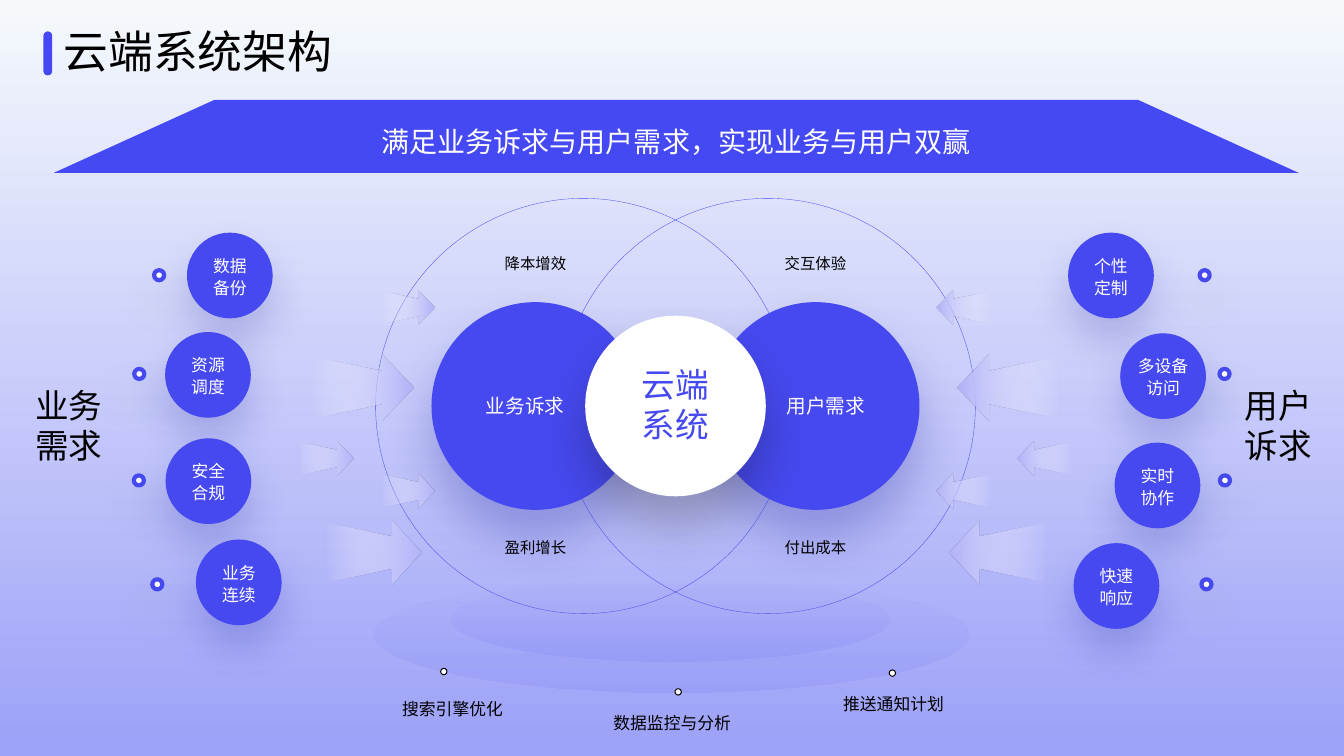
"""Builds the cloud system architecture slide."""
from lxml.etree import SubElement as Sub
from pptx import Presentation
from pptx.dml.color import RGBColor
from pptx.enum.shapes import MSO_SHAPE as Kind
from pptx.enum.text import MSO_ANCHOR as Anchor, PP_ALIGN as Align
from pptx.oxml.ns import qn
from pptx.util import Pt

FONT = "Noto Sans CJK SC"
BLUE = RGBColor(0x46, 0x49, 0xEF)
BRIGHT = RGBColor(0x44, 0x49, 0xF4)
LILAC = RGBColor(0xB5, 0xB6, 0xF9)
SKY = RGBColor(0xF5, 0xF9, 0xFC)
DUSK = RGBColor(0x9D, 0xA1, 0xF8)
NAVY = RGBColor(0x0C, 0x0F, 0x8E)
GREEN = RGBColor(0x0D, 0x62, 0x48)
INK = RGBColor(0x0D, 0x0D, 0x0D)
WHITE = RGBColor(0xFF, 0xFF, 0xFF)
BLACK = RGBColor(0, 0, 0)

TITLE = "云端系统架构"
BANNER = "满足业务诉求与用户需求，实现业务与用户双赢"
HUB = "云端系统"
MID, ROW = 482.5, 290
HALVES = [
    (1, "用户需求", "交互体验", "付出成本"),
    (-1, "业务诉求", "降本增效", "盈利增长"),
]
ENDS = [("业务\n需求", 49), ("用户\n诉求", 913)]
BALLS = [
    ("数据\n备份", 164.2, 196.8), ("资源\n调度", 148.6, 267.8),
    ("安全\n合规", 148.9, 343.7), ("业务\n连续", 170.6, 416),
    ("个性\n定制", 793.6, 196.8), ("多设备\n访问", 830.8, 268.7),
    ("实时\n协作", 826.8, 346.8), ("快速\n响应", 797.5, 418.6),
]
FLOORS = [(478.5, 442.4, 314, 59.8), (479.9, 453.2, 425.5, 82.8)]
FOOT = [
    ("搜索引擎优化", 323.3, 506.2, 317, 479.7),
    ("推送通知计划", 638.3, 502.5, 637.4, 480.8),
    ("数据监控与分析", 480.2, 516.2, 484.4, 494.2),
]
DOT_MID = 487.1
DOTS = [(373.4, 196.6), (387.6, 267.1), (387.9, 343.2), (374.7, 417.4)]
TIP_MID = 489.8
TIPS = [
    (179.2, 219.5, 38.2, 24.5), (194.2, 276.7, 72.7, 47.5),
    (237.3, 327.7, 38.2, 24.5), (179.2, 350.8, 38.2, 24.5),
    (188.4, 394.7, 69.1, 45.4),
]

deck = Presentation()
deck.slide_width, deck.slide_height = Pt(960), Pt(540)
slide = deck.slides.add_slide(deck.slide_layouts[6])


def blend(fill, stops, angle):
    fill.gradient()
    fill.gradient_angle = angle
    for stop, (place, color) in zip(fill.gradient_stops, stops):
        stop.position = place
        stop.color.rgb = color


def fade(shape, *alphas):
    colors = list(shape.element.spPr.iter(qn("a:srgbClr")))
    for color, alpha in zip(colors, alphas):
        Sub(color, qn("a:alpha"), val=str(alpha * 1000))


def shade(shape, color, alpha, blur, drop):
    effects = shape.element.spPr.find(qn("a:effectLst"))
    outer = Sub(effects, qn("a:outerShdw"), blurRad=str(Pt(blur)),
                dist=str(Pt(drop)), dir="5400000", algn="t", rotWithShape="0")
    tint = Sub(outer, qn("a:srgbClr"), val=str(color))
    Sub(tint, qn("a:alpha"), val=str(alpha * 1000))


def paint(shape, fill=None, line=None, width=0.75):
    shape.shadow.inherit = False
    if fill is None:
        shape.fill.background()
    else:
        shape.fill.solid()
        shape.fill.fore_color.rgb = fill
    if line is None:
        shape.line.fill.background()
    else:
        shape.line.color.rgb = line
        shape.line.width = Pt(width)


def oval(x, y, wide, high=None, **style):
    high = high or wide
    shape = slide.shapes.add_shape(
        Kind.OVAL, Pt(x - wide / 2), Pt(y - high / 2), Pt(wide), Pt(high))
    paint(shape, **style)
    return shape


def write(frame, text, size, color, align=Align.CENTER, gap=None):
    frame.text = text
    frame.vertical_anchor = Anchor.MIDDLE
    for para in frame.paragraphs:
        para.alignment = align
        para.line_spacing = gap
        for run in para.runs:
            run.font.size = Pt(size)
            run.font.name = FONT
            run.font.color.rgb = color
            Sub(run.font._element, qn("a:ea"), typeface=FONT)


def note(text, x, y, wide, size, color=BLACK, high=40, **style):
    box = slide.shapes.add_textbox(
        Pt(x - wide / 2), Pt(y - high / 2), Pt(wide), Pt(high))
    box.text_frame.word_wrap = True
    write(box.text_frame, text, size, color, **style)


def arrow(side, gap, y, wide, high):
    tip, half = TIP_MID + side * gap, high / 2
    neck, tail = tip + side * wide * 0.31, tip + side * wide
    rim = [(neck, half), (neck, half * 0.5), (tail, half * 0.94),
           (tail, -half * 0.94), (neck, -half * 0.5), (neck, -half)]
    path = slide.shapes.build_freeform(Pt(tip), Pt(y))
    path.add_line_segments([(Pt(x), Pt(y + rise)) for x, rise in rim])
    shape = path.convert_to_shape()
    paint(shape)
    blend(shape.fill, [(0.05, LILAC), (1, WHITE)], 0 if side > 0 else 180)
    fade(shape, 100, 0)


blend(slide.background.fill, [(0, SKY), (1, DUSK)], 270)

for floor in FLOORS:
    pool = oval(*floor)
    blend(pool.fill, [(0, BLUE), (1, BLUE)], 270)
    fade(pool, 0, 10)

for text, x, y, dot_x, dot_y in FOOT:
    note(text, x, y, 130, 12, high=22)
    oval(dot_x, dot_y, 4.5, fill=WHITE, line=BLACK, width=0.7)

for text, x in ENDS:
    note(text, x, 303.5, 70, 24, high=66)

for text, x, y in BALLS:
    shade(oval(x, y, 60.5, fill=BLUE, line=BLUE), NAVY, 18, 29, 16)
    note(text, x, y, 70, 12, WHITE, gap=1.1)

for side, *_ in HALVES:
    disc = oval(MID + side * 100.1, ROW, 148.4, fill=BLUE)
    shade(disc, NAVY, 25, 35, 20)
for side, name, top, low in HALVES:
    note(name, MID + side * 107.3, ROW, 76, 14, WHITE, high=24)
    note(top, MID + side * 100, 188.2, 76, 11, high=21)
    note(low, MID + side * 100, 391.2, 76, 11, high=21)
    oval(MID + side * 65.9, ROW, 296.6, line=BLUE, width=0.23)

shade(oval(MID, ROW, 129, fill=WHITE), INK, 25, 35, 20)
note(HUB, MID, 288.5, 75.6, 24, BLUE, high=66)

for side in (1, -1):
    for tip in TIPS:
        arrow(side, *tip)
    for gap, y in DOTS:
        dot = oval(DOT_MID + side * gap, y, 7.2, fill=WHITE, line=BLUE, width=3)
        shade(dot, GREEN, 18, 29, 16)

note(TITLE, 148.2, 36, 220, 32, high=46, align=Align.LEFT)
bar = slide.shapes.add_shape(
    Kind.ROUNDED_RECTANGLE, Pt(31), Pt(22.4), Pt(6.3), Pt(31.5))
bar.adjustments[0] = 0.5
paint(bar, BRIGHT)
roof = slide.shapes.add_shape(
    Kind.TRAPEZOID, Pt(38.4), Pt(71.4), Pt(889.2), Pt(52.1))
roof.adjustments[0] = 2.2
paint(roof, BRIGHT)
write(roof.text_frame, BANNER, 20, WHITE, gap=1.1)

deck.save("out.pptx")
